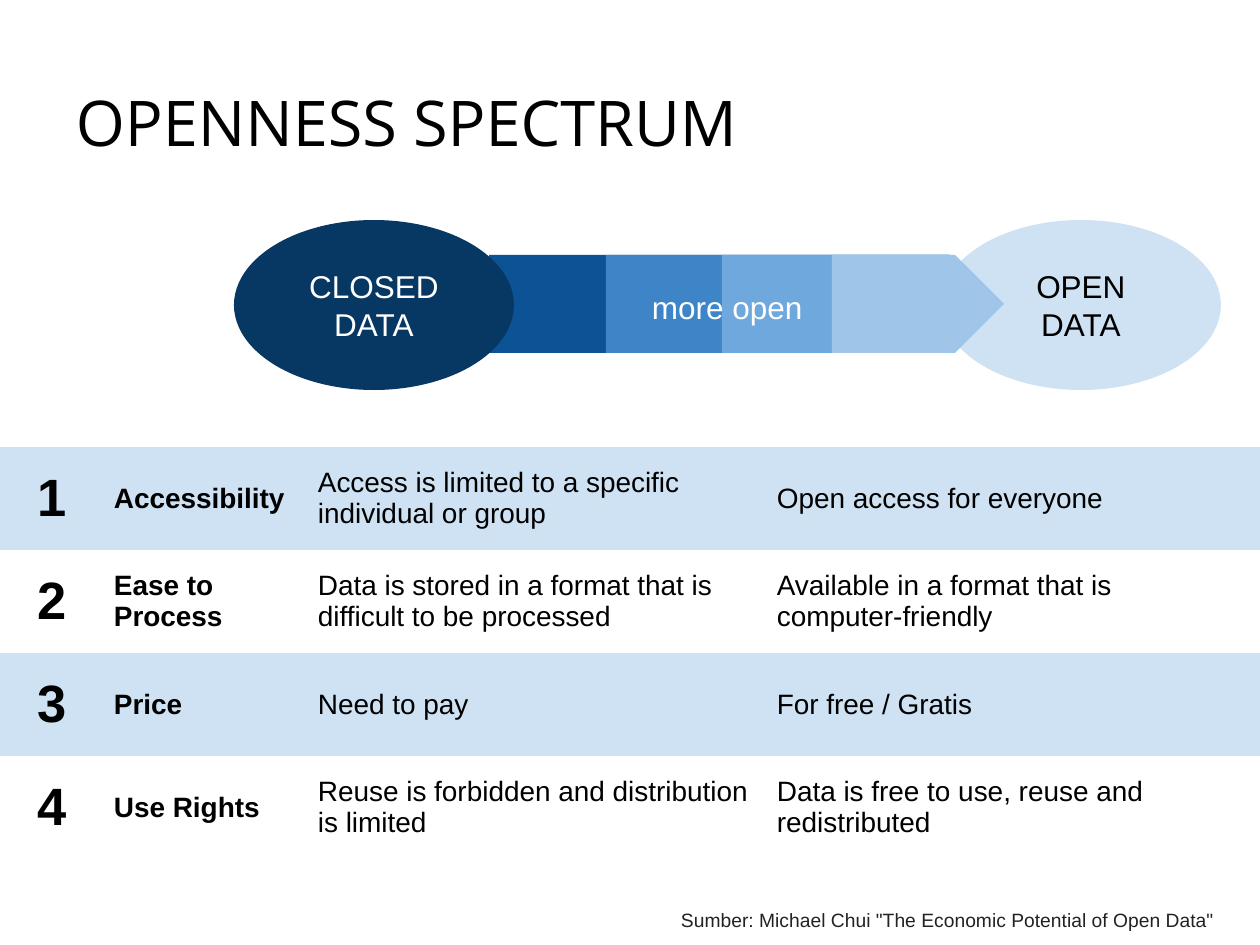
from pptx import Presentation, util as u
from pptx.dml.color import RGBColor
from pptx.enum import shapes, text

TITLE = "OPENNESS SPECTRUM"
SOURCE = 'Sumber: Michael Chui "The Economic Potential of Open Data"'
PALE, DARK, BLACK, WHITE = "CFE2F3", "073763", "000000", "FFFFFF"

# left, width, fill
ARROWS = [
    (489, 509, "0B5394"),
    (606, 393, "3D85C6"),
    (722, 277, "6FA8DC"),
    (832, 172, "9FC5E8"),
]
ROWS = [
    ("1", "Accessibility", "Access is limited to a specific individual or group",
     "Open access for everyone"),
    ("2", "Ease to Process", "Data is stored in a format that is difficult to be processed",
     "Available in a format that is computer-friendly"),
    ("3", "Price", "Need to pay", "For free / Gratis"),
    ("4", "Use Rights", "Reuse is forbidden and distribution is limited",
     "Data is free to use, reuse and redistributed"),
]
COLS = [105, 204, 459, 445, 53]
ROW_H = 103
PAD = 13
NUM_PAD = 42
PLAIN = "{2D5ABB26-0587-4C30-8999-92F81FD0307C}"  # table style without lines
MID = text.MSO_ANCHOR.MIDDLE


def px(n):
    return u.Emu(round(n * 914400 / 126))


def color(code):
    return RGBColor.from_string(code)


def write(frame, words, size, ink=BLACK, font="Arial", bold=False):
    para = frame.paragraphs[0]
    run = para.add_run()
    run.text = words
    run.font.size = u.Pt(size)
    run.font.name = font
    run.font.bold = bold
    run.font.color.rgb = color(ink)
    return para


def pad(box, left=PAD):
    box.margin_left = px(left)
    box.margin_right = box.margin_top = box.margin_bottom = px(PAD)


def label(slide, at, words, size, anchor, **look):
    frame = slide.shapes.add_textbox(*map(px, at)).text_frame
    frame.word_wrap = True
    frame.vertical_anchor = anchor
    pad(frame)
    return write(frame, words, size, **look)


def block(slide, kind, at, fill):
    shape = slide.shapes.add_shape(kind, *map(px, at))
    shape.shadow.inherit = False
    shape.fill.solid()
    shape.fill.fore_color.rgb = color(fill)
    shape.line.fill.background()
    return shape


def oval(slide, left, words, fill, ink):
    shape = block(slide, shapes.MSO_SHAPE.OVAL, (left, 220, 280, 170), fill)
    frame = shape.text_frame
    frame.word_wrap = True
    frame.vertical_anchor = MID
    pad(frame)
    write(frame, words, 18, ink).alignment = text.PP_ALIGN.CENTER


def grid(slide):
    at = (-4, 447, sum(COLS), ROW_H * len(ROWS))
    frame = slide.shapes.add_table(len(ROWS), len(COLS), *map(px, at))
    table = frame.table
    table.first_row = table.horz_banding = False
    table._tbl.tblPr[0].text = PLAIN
    for col, width in zip(table.columns, COLS):
        col.width = px(width)
    for r, row in enumerate(ROWS):
        table.rows[r].height = px(ROW_H)
        for c in range(len(COLS)):
            cell = table.cell(r, c)
            if r % 2:
                cell.fill.background()
            else:
                cell.fill.solid()
                cell.fill.fore_color.rgb = color(PALE)
            cell.vertical_anchor = MID
            pad(cell, NUM_PAD if c == 0 else PAD)
            if c < len(row):
                para = write(cell.text_frame, row[c], 16 if c else 30, bold=c < 2)
                para.space_before = para.space_after = u.Pt(1.4)


def main():
    deck = Presentation()
    deck.slide_width, deck.slide_height = px(1260), px(945)
    slide = deck.slides.add_slide(deck.slide_layouts[6])

    label(slide, (63, 38, 1134, 134), TITLE, 36, text.MSO_ANCHOR.BOTTOM, font="Open Sans")
    oval(slide, 941, "OPEN DATA", PALE, BLACK)
    for left, width, fill in ARROWS:
        arrow = block(slide, shapes.MSO_SHAPE.PENTAGON, (left, 255, width, 98), fill)
        arrow.adjustments[0] = 0.5
    grid(slide)
    label(slide, (639, 275, 236, 62), "more open", 18, text.MSO_ANCHOR.TOP, ink=WHITE)
    para = label(slide, (668, 892, 592, 52), SOURCE, 11, MID, ink="222222")
    para.line_spacing = 1.15
    para.space_after = u.Pt(8)
    oval(slide, 234, "CLOSED DATA", DARK, WHITE)

    deck.save("out.pptx")


if __name__ == "__main__":
    main()
